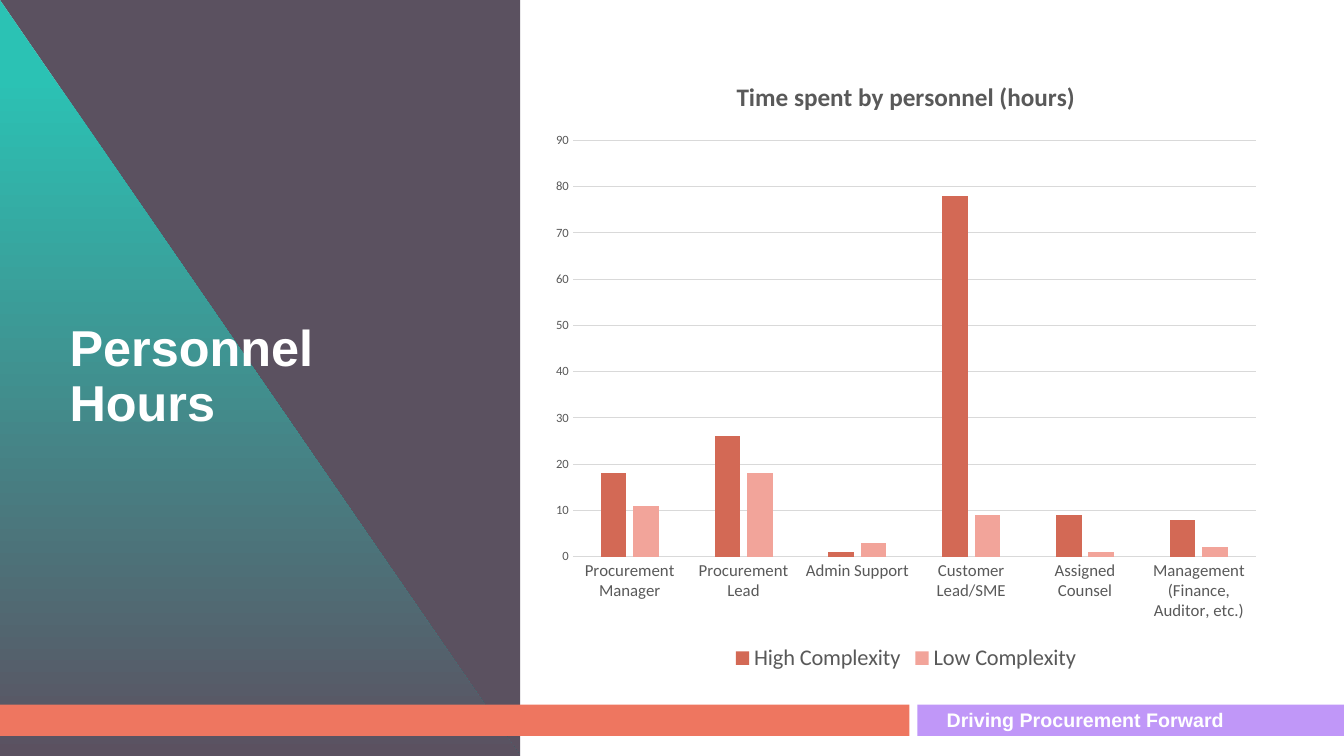
from pptx import Presentation
from pptx.chart.data import CategoryChartData
from pptx.dml.color import RGBColor
from pptx.enum.chart import XL_CHART_TYPE, XL_LEGEND_POSITION, XL_TICK_MARK
from pptx.enum.shapes import MSO_SHAPE
from pptx.enum.text import MSO_ANCHOR, MSO_AUTO_SIZE, PP_ALIGN
from pptx.util import Inches, Pt

W, H = 13.33, 7.5
COLORS = {
    "plum": "5B5160", "teal": "2BC2B4", "coral": "EE7660", "lilac": "C097F8",
    "white": "FFFFFF", "grid": "D9D9D9", "label": "595959",
    "high": "D36955", "low": "F2A49A",
}
CATEGORIES = [
    "Procurement Manager", "Procurement Lead", "Admin Support",
    "Customer Lead/SME", "Assigned Counsel", "Management (Finance, Auditor, etc.)",
]
SERIES = [
    ("High Complexity", "high", (18, 26, 1, 78, 9, 8)),
    ("Low Complexity", "low", (11, 18, 3, 9, 1, 2)),
]


def rgb(name):
    return RGBColor.from_string(COLORS[name])


def style_font(font, name, size, color, bold=False):
    font.name, font.size, font.bold = name, Pt(size), bold
    font.color.rgb = rgb(color)


def add_filled(slide, kind, box, color):
    sp = slide.shapes.add_shape(kind, *map(Inches, box))
    sp.shadow.inherit = False
    sp.fill.solid()
    sp.fill.fore_color.rgb = rgb(color)
    sp.line.fill.background()
    return sp


def write_text(tf, text, size):
    tf.word_wrap = True
    tf.auto_size = MSO_AUTO_SIZE.NONE
    tf.vertical_anchor = MSO_ANCHOR.MIDDLE
    p = tf.paragraphs[0]
    p.alignment = PP_ALIGN.LEFT
    r = p.add_run()
    r.text = text
    style_font(r.font, "Arial", size, "white", True)
    return p


def add_panel(slide, box):
    upper = add_filled(slide, MSO_SHAPE.RIGHT_TRIANGLE, box, "plum")
    upper.rotation = 180
    lower = add_filled(slide, MSO_SHAPE.RIGHT_TRIANGLE, box, "plum")
    lower.fill.gradient()
    lower.fill.gradient_angle = 270
    for stop, position, color in zip(lower.fill.gradient_stops, (0.1, 1), ("teal", "plum")):
        stop.position = position
        stop.color.rgb = rgb(color)


def add_footer(slide, box):
    x, y, w, h = box
    split, gap = 9.02, 0.08
    right = x + split + gap
    add_filled(slide, MSO_SHAPE.RECTANGLE, (x, y, split, h), "coral")
    add_filled(slide, MSO_SHAPE.RECTANGLE, (right, y, w - split - gap, h), "lilac")
    tagline = slide.shapes.add_textbox(*map(Inches, (right + 0.19, y - 0.02, 3.31, 0.34)))
    write_text(tagline.text_frame, "Driving Procurement Forward", 14)


def place_title(slide, box):
    title = slide.shapes.title
    title.left, title.top, title.width, title.height = map(Inches, box)
    p = write_text(title.text_frame, "Personnel Hours", 36)
    p.line_spacing = 0.9
    slide.shapes._spTree.append(title._element)


def style_axes(chart):
    cat, val = chart.category_axis, chart.value_axis
    for axis, size in ((cat, 12), (val, 9)):
        axis.major_tick_mark = axis.minor_tick_mark = XL_TICK_MARK.NONE
        style_font(axis.tick_labels.font, "Calibri", size, "label")
    val.minimum_scale, val.maximum_scale, val.major_unit = 0, 90, 10
    val.tick_labels.number_format = "0"
    val.tick_labels.number_format_is_linked = False
    val.format.line.fill.background()
    val.has_major_gridlines = True
    for line in (cat.format.line, val.major_gridlines.format.line):
        line.color.rgb = rgb("grid")
        line.width = Pt(0.75)


def add_hours_chart(slide, box):
    data = CategoryChartData(number_format="0")
    data.categories = CATEGORIES
    for name, _, values in SERIES:
        data.add_series(name, values)
    chart = slide.shapes.add_chart(
        XL_CHART_TYPE.COLUMN_CLUSTERED, *map(Inches, box), data).chart
    style_font(chart.font, "Calibri", 10, "label")

    chart.has_title = True
    r = chart.chart_title.text_frame.paragraphs[0].add_run()
    r.text = "Time spent by personnel (hours)"
    style_font(r.font, "Calibri", 18, "label", True)
    chart.chart_title.include_in_layout = False

    chart.has_legend = True
    chart.legend.position = XL_LEGEND_POSITION.BOTTOM
    chart.legend.include_in_layout = False
    style_font(chart.legend.font, "Calibri", 16, "label")

    style_axes(chart)
    plot = chart.plots[0]
    plot.gap_width, plot.overlap = 219, -27
    plot.vary_by_categories = False
    for series, (_, color, _) in zip(plot.series, SERIES):
        series.format.fill.solid()
        series.format.fill.fore_color.rgb = rgb(color)
        series.invert_if_negative = False


def main():
    prs = Presentation()
    prs.slide_width, prs.slide_height = Inches(W), Inches(H)
    slide = prs.slides.add_slide(prs.slide_layouts[5])
    slide.background.fill.solid()
    slide.background.fill.fore_color.rgb = rgb("white")
    add_panel(slide, (0, 0, 5.16, H))
    add_footer(slide, (0, 6.99, W, 0.31))
    place_title(slide, (0.59, 1.16, 3.98, 5.17))
    add_hours_chart(slide, (5.37, 0.57, 7.23, 6.14))
    prs.save("out.pptx")


if __name__ == "__main__":
    main()
